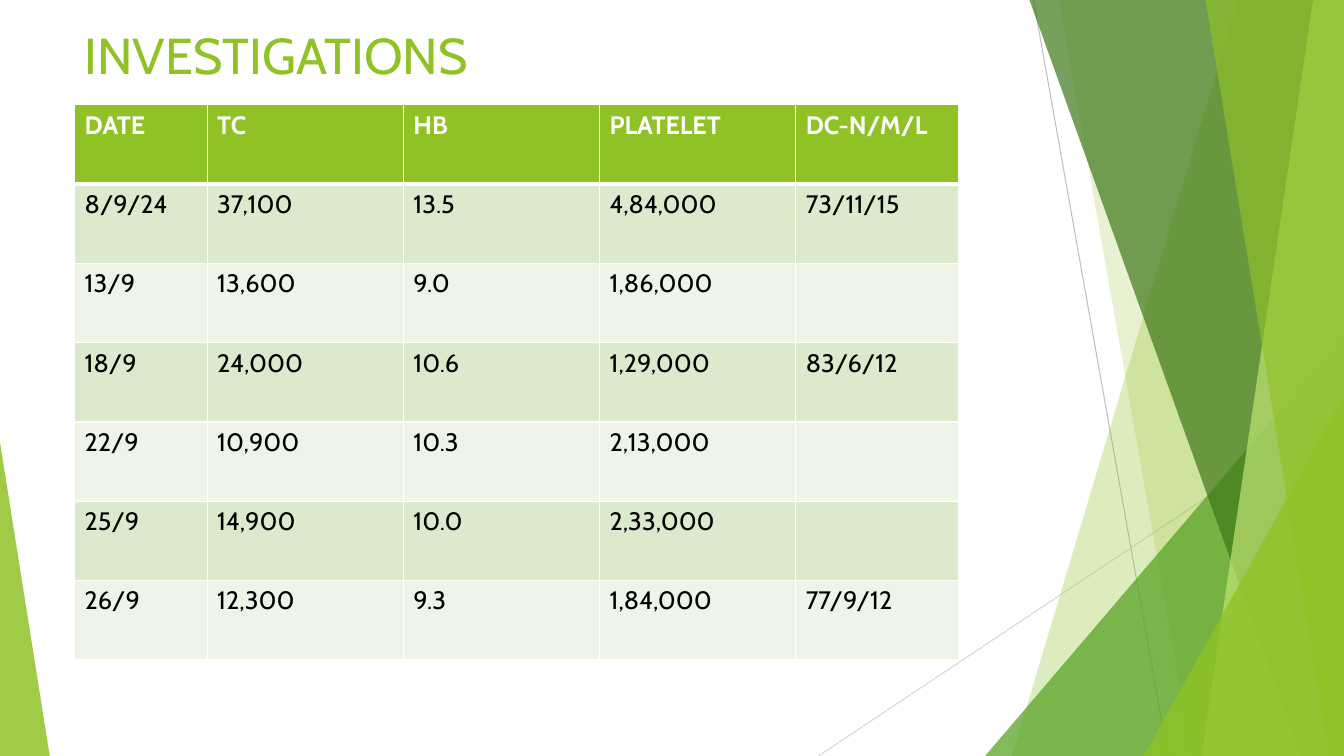
from lxml import etree
from pptx import Presentation, util as u
from pptx.dml.color import RGBColor
from pptx.enum import shapes, text
from pptx.oxml.ns import qn

W, H = u.Inches(13.333), u.Inches(7.5)
FONT, GREEN, WHITE, BLACK = "Cabin", "90C226", "FFFFFF", "000000"
BANDS = ["DBE9CD", "EEF4E8"]
COLUMNS = [9.86, 14.6, 14.6, 14.6, 12.13]
ROW = 10.49
RESULTS = [
    ["DATE", "TC", "HB", "PLATELET", "DC-N/M/L"],
    ["8/9/24", "37,100", "13.5", "4,84,000", "73/11/15"],
    ["13/9", "13,600", "9.0", "1,86,000", ""],
    ["18/9", "24,000", "10.6", "1,29,000", "83/6/12"],
    ["22/9", "10,900", "10.3", "2,13,000", ""],
    ["25/9", "14,900", "10.0", "2,33,000", ""],
    ["26/9", "12,300", "9.3", "1,84,000", "77/9/12"],
]


def x(percent):
    """Turn a percentage of the slide width into a length."""
    return u.Emu(round(W * percent / 100))


def y(percent):
    """Turn a percentage of the slide height into a length."""
    return u.Emu(round(H * percent / 100))


def color(value):
    """Turn a hex string into a colour."""
    return RGBColor.from_string(value)


def paint(sp, fill, opacity):
    """Give a shape a translucent fill without line or shadow."""
    sp.shadow.inherit = False
    sp.line.fill.background()
    sp.fill.solid()
    sp.fill.fore_color.rgb = color(fill)
    srgb = sp.fill._xPr.find(qn("a:solidFill"))[0]
    etree.SubElement(srgb, qn("a:alpha"), val=str(opacity * 1000))


def add_line(s, start, end, stroke):
    """Draw a thin straight line between two points."""
    sp = s.shapes.add_connector(shapes.MSO_CONNECTOR.STRAIGHT,
                                x(start[0]), y(start[1]), x(end[0]), y(end[1]))
    sp.line.color.rgb = color(stroke)
    sp.line.width = u.Pt(0.75)
    etree.SubElement(sp._element.spPr, qn("a:effectLst"))


def add_slab(s, top, bottom, fill, opacity):
    """Fill the slide from a slanted left edge to its right side."""
    builder = s.shapes.build_freeform(x(top), y(0))
    builder.add_line_segments([(x(100), y(0)), (x(100), y(100)), (x(bottom), y(100))])
    paint(builder.convert_to_shape(), fill, opacity)


def add_corner(s, left, right, top, apex, fill, opacity):
    """Stand a right triangle on the bottom edge."""
    sp = s.shapes.add_shape(shapes.MSO_SHAPE.ISOSCELES_TRIANGLE,
                            x(left), y(top), x(right - left), y(100 - top))
    sp.adjustments[0] = apex
    paint(sp, fill, opacity)


def write(tf, content, size=18, ink=BLACK, bold=False):
    """Put one formatted run into a text frame."""
    p = tf.paragraphs[0]
    p.font.size = u.Pt(size)
    if content:
        r = p.add_run()
        r.text = content
        r.font.name, r.font.size, r.font.bold = FONT, u.Pt(size), bold
        r.font.color.rgb = color(ink)


def add_title(s, content):
    """Add the slide heading."""
    tf = s.shapes.add_textbox(x(5.55), y(2.5), x(70.5), y(11.3)).text_frame
    tf.word_wrap = True
    tf.vertical_anchor = text.MSO_ANCHOR.TOP
    write(tf, content, size=36, ink=GREEN)


def add_borders(cell, **widths):
    """Draw white cell borders with the given widths in points."""
    pr = cell._tc.get_or_add_tcPr()
    for i, (tag, width) in enumerate(widths.items()):
        ln = etree.Element(qn("a:" + tag), w=str(u.Pt(width)))
        solid = etree.SubElement(ln, qn("a:solidFill"))
        etree.SubElement(solid, qn("a:srgbClr"), val=WHITE)
        pr.insert(i, ln)


def add_results(s, rows):
    """Add the banded table of results."""
    table = s.shapes.add_table(len(rows), len(COLUMNS), x(5.55), y(13.87),
                               x(sum(COLUMNS)), y(ROW * len(rows))).table
    for column, width in zip(table.columns, COLUMNS):
        column.width = x(width)
    for i, row in enumerate(rows):
        table.rows[i].height = y(ROW)
        header = i == 0
        for j, value in enumerate(row):
            cell = table.cell(i, j)
            cell.fill.solid()
            cell.fill.fore_color.rgb = color(GREEN if header else BANDS[(i - 1) % 2])
            add_borders(cell, lnL=1, lnR=1, lnT=3 if i == 1 else 1, lnB=3 if header else 1)
            write(cell.text_frame, value, ink=WHITE if header else BLACK, bold=header)


def add_backdrop(s):
    """Draw the overlapping green facets."""
    add_line(s, (76.9, 0), (86.9, 100), "BFBFBF")
    add_line(s, (100, 53.7), (60.9, 100), "D9D9D9")
    add_slab(s, 92.1, 75.3, GREEN, 30)
    add_slab(s, 78.8, 88.7, GREEN, 20)
    add_corner(s, 73.3, 100, 44.4, 1, "54A021", 72)
    add_slab(s, 76.6, 96.8, "3F7819", 70)
    add_slab(s, 97.7, 89.4, "C0E474", 70)
    add_slab(s, 89.7, 98.9, GREEN, 65)
    add_corner(s, 85.1, 100, 52.4, 1, GREEN, 80)
    add_corner(s, 0, 3.7, 58.5, 0, GREEN, 85)


def main():
    """Build and save the slide."""
    prs = Presentation()
    prs.slide_width, prs.slide_height = W, H
    s = prs.slides.add_slide(prs.slide_layouts[6])
    add_backdrop(s)
    add_title(s, "INVESTIGATIONS")
    add_results(s, RESULTS)
    prs.save("out.pptx")


if __name__ == "__main__":
    main()
